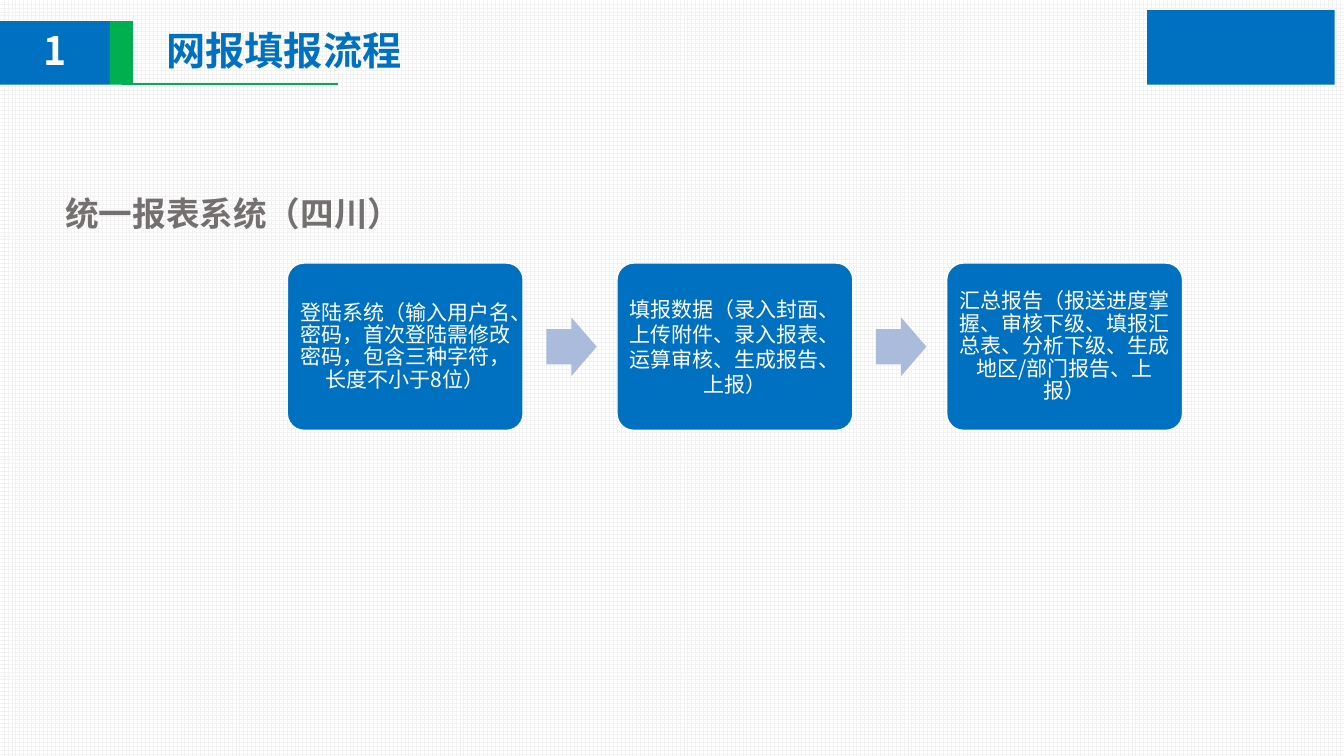
"""Build a slide with the three steps of online report filing."""
from dataclasses import dataclass

import pptx
import pptx.dml.color
import pptx.enum.dml
import pptx.enum.shapes
import pptx.enum.text
import pptx.oxml
import pptx.oxml.ns
import pptx.util

SHAPES = pptx.enum.shapes.MSO_SHAPE
ALIGN = pptx.enum.text.PP_ALIGN


@dataclass(frozen=True)
class Theme:
    blue: str = "0070C0"
    green: str = "00B050"
    arrow: str = "ABBBDC"
    grey: str = "757070"
    grid: str = "F2F2F2"
    white: str = "FFFFFF"
    font: str = "Noto Sans CJK SC"
    latin_font: str = "Calibri"
    title_size: float = 28
    subtitle_size: float = 24
    step_size: float = 15


@dataclass(frozen=True)
class Area:
    """Left, top, width and height as percentages of the slide's size."""
    left: float
    top: float
    width: float
    height: float


@dataclass(frozen=True)
class Step:
    text: str
    line_spacing: float


THEME = Theme()
SLIDE_WIDTH = pptx.util.Inches(13.33)
SLIDE_HEIGHT = pptx.util.Inches(7.5)

NUMBER_BLOCK = Area(0, 2.8, 8.18, 8.4)
GREEN_BLOCK = Area(8.18, 2.8, 1.72, 8.4)
HEADER_RULE = Area(9.08, 11.1, 16.04, 0)
EMBLEM = Area(85.35, 1.33, 13.95, 9.87)
TITLE = Area(11.63, 2.8, 61.2, 8.27)
SUBTITLE = Area(4.12, 24.8, 26.78, 6.67)
FIRST_STEP = Area(21.38, 34.8, 17.55, 22.13)
FIRST_ARROW = Area(40.65, 42, 3.75, 7.73)
STEP_PITCH = 24.53

STEPS = (
    Step("登陆系统（输入用户名、密码，首次登陆需修改密码，包含三种字符，长度不小于8位）", 16),
    Step("填报数据（录入封面、上传附件、录入报表、运算审核、生成报告、上报）", 18),
    Step("汇总报告（报送进度掌握、审核下级、填报汇总表、分析下级、生成地区/部门报告、上报）", 16),
)


def rgb(color: str) -> pptx.dml.color.RGBColor:
    return pptx.dml.color.RGBColor.from_string(color)


def across(percent: float) -> int:
    return round(SLIDE_WIDTH * percent / 100)


def down(percent: float) -> int:
    return round(SLIDE_HEIGHT * percent / 100)


def bounds(area: Area) -> tuple[int, int, int, int]:
    return across(area.left), down(area.top), across(area.width), down(area.height)


def shifted(area: Area, index: int) -> Area:
    return Area(area.left + index * STEP_PITCH, area.top, area.width, area.height)


def add_block(slide, kind, area: Area, color: str, outline: str | None = None):
    shape = slide.shapes.add_shape(kind, *bounds(area))
    shape.shadow.inherit = False
    shape.fill.solid()
    shape.fill.fore_color.rgb = rgb(color)
    if outline:
        shape.line.color.rgb = rgb(outline)
        shape.line.width = pptx.util.Pt(1)
    else:
        shape.line.fill.background()
    return shape


def write(shape, text: str, size: float, color: str, bold: bool = False,
          font: str = THEME.font, align=ALIGN.LEFT, spacing=None, wrap: bool = True) -> None:
    frame = shape.text_frame
    frame.auto_size = pptx.enum.text.MSO_AUTO_SIZE.NONE
    frame.word_wrap = wrap
    frame.vertical_anchor = pptx.enum.text.MSO_ANCHOR.MIDDLE
    paragraph = frame.paragraphs[0]
    paragraph.alignment = align
    paragraph.line_spacing = spacing
    run = paragraph.add_run()
    run.text = text
    run.font.size = pptx.util.Pt(size)
    run.font.bold = bold
    run.font.name = font
    run.font.color.rgb = rgb(color)
    east_asian = pptx.oxml.parse_xml(
        f'<a:ea {pptx.oxml.ns.nsdecls("a")} typeface="{THEME.font}"/>')
    run.font._element.append(east_asian)


def add_header(slide) -> None:
    number = add_block(slide, SHAPES.RECTANGLE, NUMBER_BLOCK, THEME.blue)
    write(number, "1", THEME.title_size, THEME.white, True, align=ALIGN.CENTER, spacing=0.9)
    add_block(slide, SHAPES.RECTANGLE, GREEN_BLOCK, THEME.green)
    add_block(slide, SHAPES.RECTANGLE, EMBLEM, THEME.blue)

    left, top, width, height = bounds(HEADER_RULE)
    rule = slide.shapes.add_connector(
        pptx.enum.shapes.MSO_CONNECTOR.STRAIGHT, left, top, left + width, top + height)
    rule.line.color.rgb = rgb(THEME.green)
    rule.line.width = pptx.util.Pt(1.5)
    rule._element.spPr.append(
        pptx.oxml.parse_xml(f'<a:effectLst {pptx.oxml.ns.nsdecls("a")}/>'))

    title = slide.shapes.title
    title.left, title.top, title.width, title.height = bounds(TITLE)
    write(title, "网报填报流程", THEME.title_size, THEME.blue, True, spacing=0.9)


def add_step(slide, index: int, step: Step) -> None:
    box = add_block(slide, SHAPES.ROUNDED_RECTANGLE, shifted(FIRST_STEP, index),
                    THEME.blue, THEME.white)
    box.adjustments[0] = 0.1
    frame = box.text_frame
    frame.margin_left = frame.margin_right = pptx.util.Inches(0.06)
    frame.margin_top = frame.margin_bottom = pptx.util.Inches(0.06)
    write(box, step.text, THEME.step_size, THEME.white, align=ALIGN.CENTER,
          spacing=pptx.util.Pt(step.line_spacing))


def add_arrow(slide, index: int) -> None:
    arrow = add_block(slide, SHAPES.RIGHT_ARROW, shifted(FIRST_ARROW, index), THEME.arrow)
    arrow.adjustments[0] = 0.6
    arrow.adjustments[1] = 0.5


def main() -> None:
    presentation = pptx.Presentation()
    presentation.slide_width = SLIDE_WIDTH
    presentation.slide_height = SLIDE_HEIGHT
    slide = presentation.slides.add_slide(presentation.slide_layouts[5])

    background = slide.background.fill
    background.patterned()
    background.pattern = pptx.enum.dml.MSO_PATTERN.LARGE_GRID
    background.fore_color.rgb = rgb(THEME.grid)
    background.back_color.rgb = rgb(THEME.white)

    add_header(slide)
    subtitle = slide.shapes.add_textbox(*bounds(SUBTITLE))
    write(subtitle, "统一报表系统（四川）", THEME.subtitle_size, THEME.grey, True,
          font=THEME.latin_font, wrap=False)
    for index, step in enumerate(STEPS):
        add_step(slide, index, step)
        if index < len(STEPS) - 1:
            add_arrow(slide, index)
    presentation.save("out.pptx")


if __name__ == "__main__":
    main()
